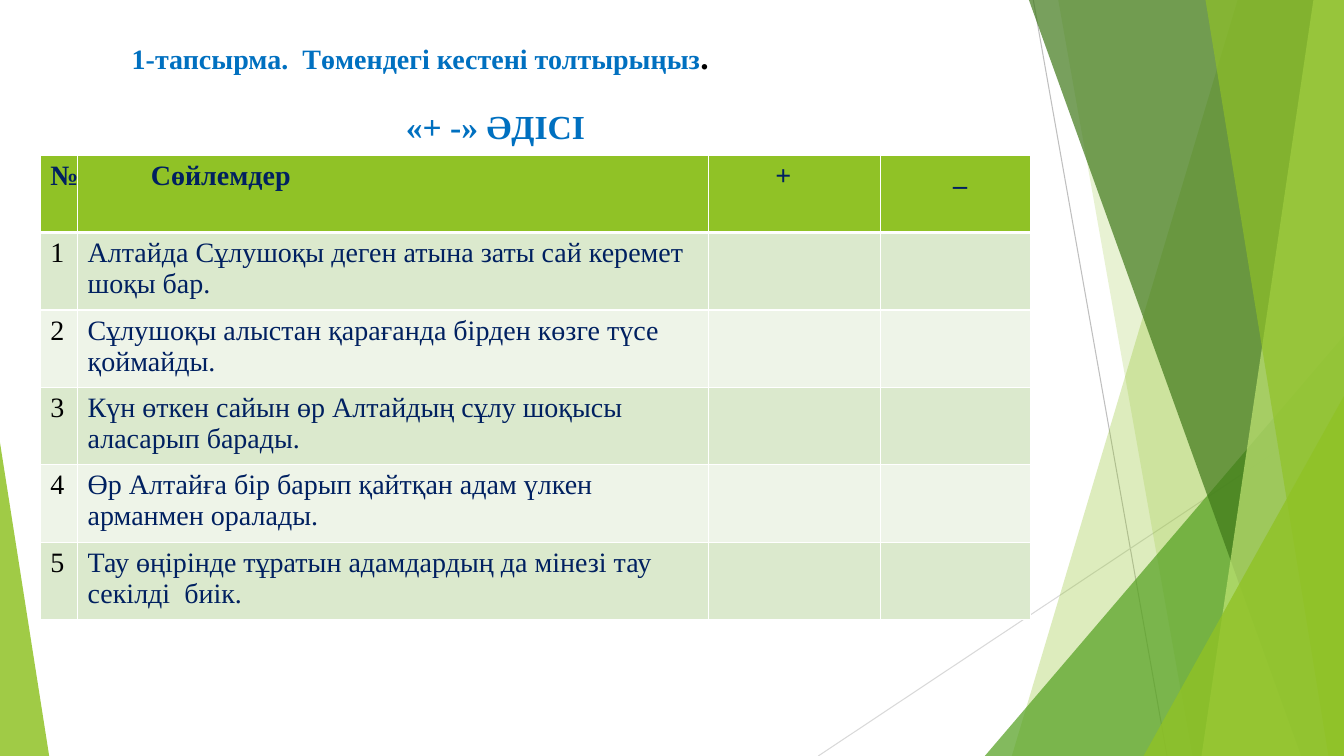
from collections import namedtuple

from lxml.etree import SubElement
from pptx import Presentation
from pptx.dml.color import RGBColor
from pptx.enum.shapes import MSO_CONNECTOR, MSO_SHAPE
from pptx.enum.text import MSO_AUTO_SIZE
from pptx.oxml import parse_xml
from pptx.oxml.ns import nsdecls, qn
from pptx.util import Cm, Pt

Box = namedtuple("Box", "left top width height")

FONT = "Times New Roman"
LIME = RGBColor(0x90, 0xC2, 0x26)
LEAF = RGBColor(0x54, 0xA0, 0x21)
FOREST = RGBColor(0x3F, 0x78, 0x19)
PALE_LIME = RGBColor(0xC0, 0xE4, 0x74)
GREY = RGBColor(0xBF, 0xBF, 0xBF)
LIGHT_GREY = RGBColor(0xD9, 0xD9, 0xD9)
BLUE = RGBColor(0x00, 0x70, 0xC0)
NAVY = RGBColor(0x00, 0x20, 0x60)
BLACK = RGBColor(0x00, 0x00, 0x00)
BANDS = [RGBColor(0xDB, 0xE9, 0xCD), RGBColor(0xEE, 0xF4, 0xE8)]

COLUMN_WIDTHS = [0.94, 15.9, 4.32, 3.78]
HEADERS = [("№", 0), ("Сөйлемдер", 1.59), ("+", 1.43), ("_", 1.59)]
SENTENCES = [
    "Алтайда Сұлушоқы деген атына заты сай керемет шоқы бар.",
    "Сұлушоқы алыстан қарағанда бірден көзге түсе қоймайды.",
    "Күн өткен сайын өр Алтайдың сұлу шоқысы аласарып барады.",
    "Өр Алтайға бір барып қайтқан адам үлкен арманмен оралады.",
    "Тау өңірінде тұратын адамдардың да мінезі тау секілді  биік.",
]


def paint(shape, color, opacity):
    shape.shadow.inherit = False
    shape.fill.solid()
    shape.fill.fore_color.rgb = color
    shape.line.fill.background()
    tint = shape.fill._xPr.find(qn("a:solidFill"))[0]
    SubElement(tint, qn("a:alpha"), val=str(opacity * 1000))


def add_line(page, start, end, color):
    line = page.shapes.add_connector(
        MSO_CONNECTOR.STRAIGHT, *(Cm(value) for value in start + end))
    line.line.color.rgb = color
    line.line.width = Pt(0.75)
    SubElement(line._element.spPr, qn("a:effectLst"))


def add_panel(page, box, top_x, bottom_x, color, opacity):
    right, bottom = box.left + box.width, box.top + box.height
    builder = page.shapes.build_freeform(Cm(box.left + top_x), Cm(box.top))
    corners = [(right, box.top), (right, bottom), (box.left + bottom_x, bottom)]
    builder.add_line_segments([(Cm(x), Cm(y)) for x, y in corners])
    paint(builder.convert_to_shape(), color, opacity)


def add_triangle(page, box, apex, color, opacity):
    triangle = page.shapes.add_shape(
        MSO_SHAPE.ISOSCELES_TRIANGLE, *(Cm(value) for value in box))
    triangle.adjustments[0] = apex
    paint(triangle, color, opacity)


def add_corner(page, box, width, height, on_right, color, opacity):
    left = box.left + (box.width - width if on_right else 0)
    corner = Box(left, box.top + box.height - height, width, height)
    add_triangle(page, corner, int(on_right), color, opacity)


def add_scenery(page, box):
    right, bottom = box.left + box.width, box.top + box.height
    add_line(page, (box.left + 26.04, box.top), (box.left + 29.41, bottom), GREY)
    add_line(page, (right, box.top + 10.24), (box.left + 20.62, bottom), LIGHT_GREY)
    add_panel(page, box, 31.19, 25.5, LIME, 30)
    add_panel(page, box, 26.67, 30.05, LIME, 20)
    add_corner(page, box, 9.05, 10.59, True, LEAF, 72)
    add_panel(page, box, 25.93, 32.79, FOREST, 70)
    add_panel(page, box, 33.1, 30.28, PALE_LIME, 70)
    add_panel(page, box, 30.38, 33.48, LIME, 65)
    add_corner(page, box, 5.05, 9.07, True, LIME, 80)
    add_corner(page, box, 1.24, 7.9, False, LIME, 85)


def add_heading(page, box, spans):
    frame = page.shapes.add_textbox(*(Cm(value) for value in box)).text_frame
    frame.word_wrap = False
    frame.auto_size = MSO_AUTO_SIZE.SHAPE_TO_FIT_TEXT
    para = frame.paragraphs[0]
    para.font.name = FONT
    para.font.bold = True
    for text, size, color in spans:
        span = para.add_run()
        span.text = text
        span.font.size = Pt(size)
        span.font.color.rgb = color


def add_borders(cell, top, bottom):
    sides = {"lnL": 1, "lnR": 1, "lnT": top, "lnB": bottom}
    for position, (side, width) in enumerate(sides.items()):
        border = parse_xml(
            f'<a:{side} {nsdecls("a")} w="{Pt(width)}"><a:solidFill>'
            f'<a:srgbClr val="FFFFFF"/></a:solidFill></a:{side}>')
        cell._tc.get_or_add_tcPr().insert(position, border)


def fill_cell(cell, text, color, background, bold=False, indent=0):
    cell.fill.solid()
    cell.fill.fore_color.rgb = background
    cell.margin_left = Cm(0.25 + indent)
    para = cell.text_frame.paragraphs[0]
    para.font.name = FONT
    para.font.size = Pt(20)
    para.font.bold = bold
    para.font.color.rgb = color
    if text:
        para.add_run().text = text


def add_sentence_table(page, box):
    row_count = len(SENTENCES) + 1
    table = page.shapes.add_table(
        row_count, len(COLUMN_WIDTHS), *(Cm(value) for value in box)).table
    for column, width in zip(table.columns, COLUMN_WIDTHS):
        column.width = Cm(width)
    for row in table.rows:
        row.height = Cm(box.height / row_count)
    for cell, (text, indent) in zip(table.rows[0].cells, HEADERS):
        fill_cell(cell, text, NAVY, LIME, True, indent)
        add_borders(cell, 1, 3)
    for number, sentence in enumerate(SENTENCES, 1):
        texts = [str(number), sentence, "", ""]
        for column, text in enumerate(texts):
            cell = table.cell(number, column)
            color = NAVY if column else BLACK
            fill_cell(cell, text, color, BANDS[(number - 1) % 2])
            add_borders(cell, 3 if number == 1 else 1, 1)


def build_task_page(page, box):
    add_scenery(page, box)
    add_heading(page, Box(box.left + 3.07, box.top + 0.79, 15.24, 1.27), [
        ("1-тапсырма.  Төмендегі кестені толтырыңыз", 20, BLUE),
        (".", 24, BLACK),
    ])
    add_sentence_table(
        page, Box(box.left + 1.02, box.top + 3.91, sum(COLUMN_WIDTHS), 11.7))
    add_heading(page, Box(box.left + 9.98, box.top + 2.54, 5.08, 1.27),
                [("«+ -» ӘДІСІ", 24, BLUE)])


def main():
    deck = Presentation()
    page_box = Box(0, 0, 33.87, 19.05)
    deck.slide_width = Cm(page_box.width)
    deck.slide_height = Cm(page_box.height)
    build_task_page(deck.slides.add_slide(deck.slide_layouts[6]), page_box)
    deck.save("out.pptx")


if __name__ == "__main__":
    main()
